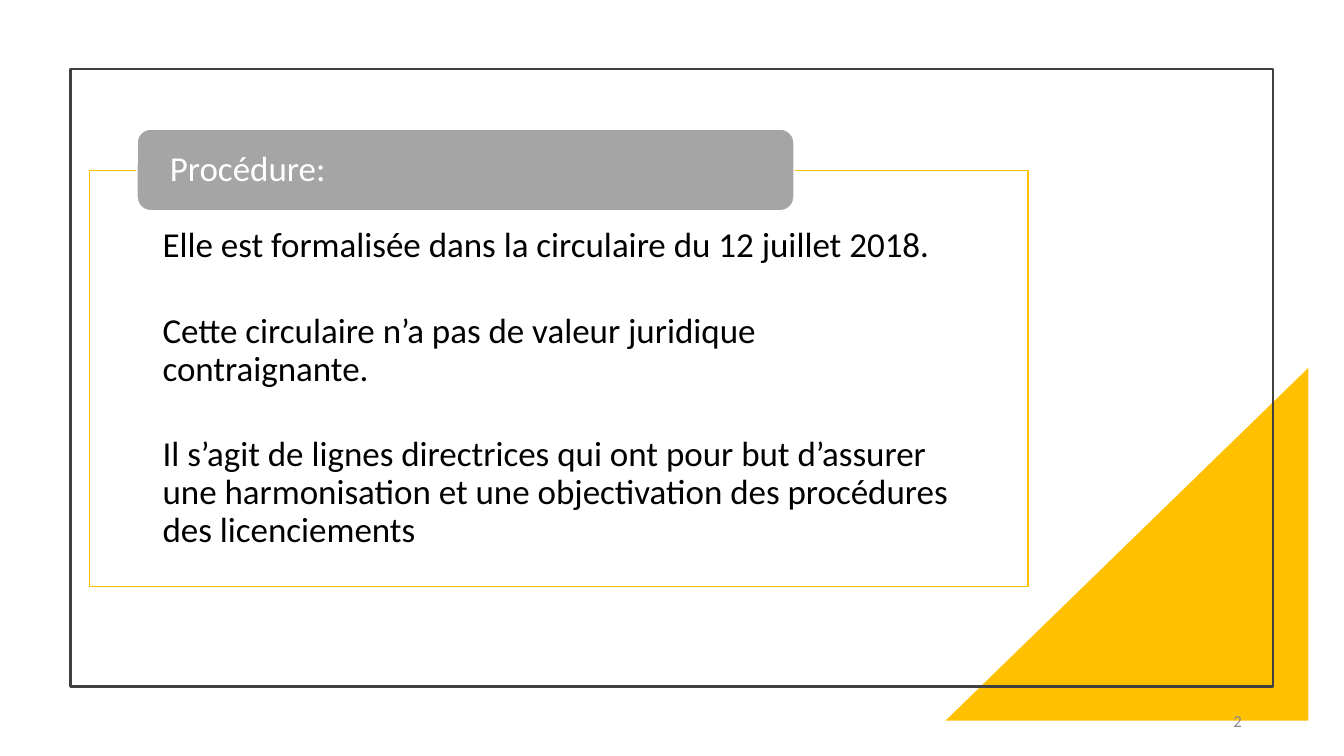
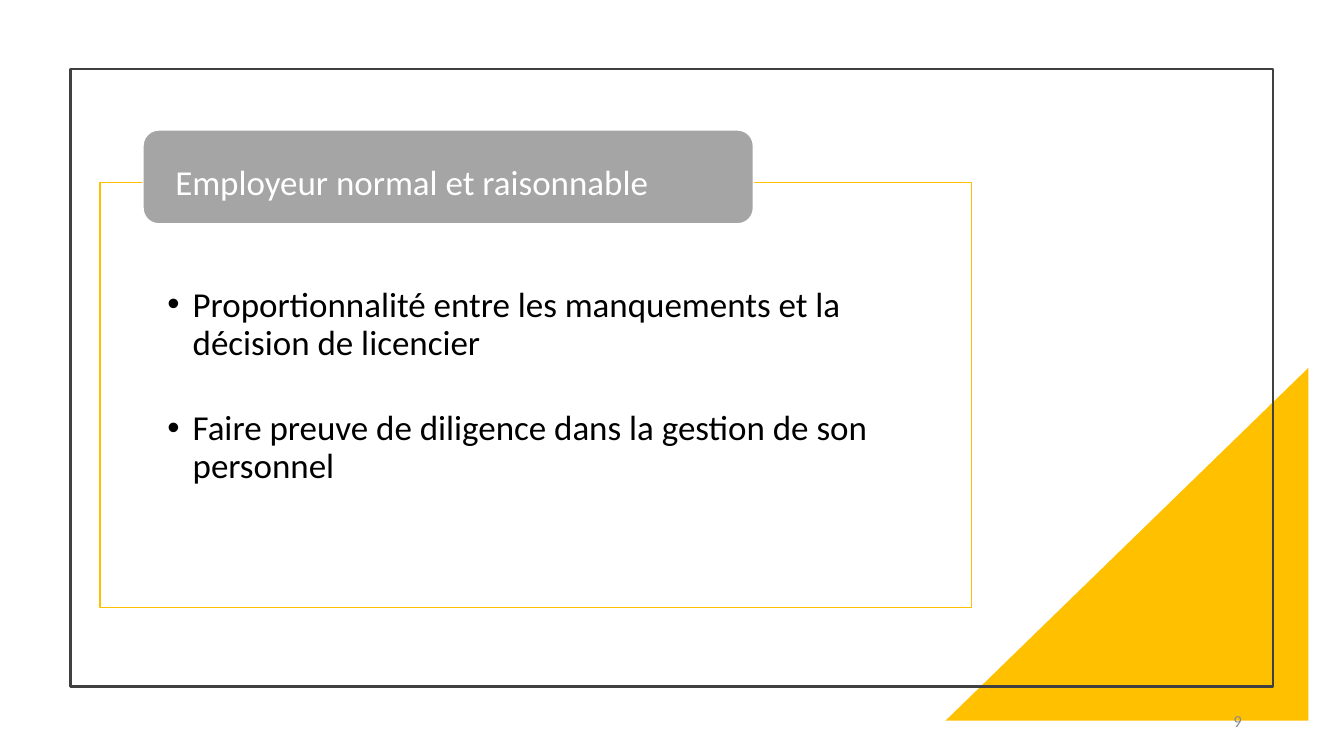
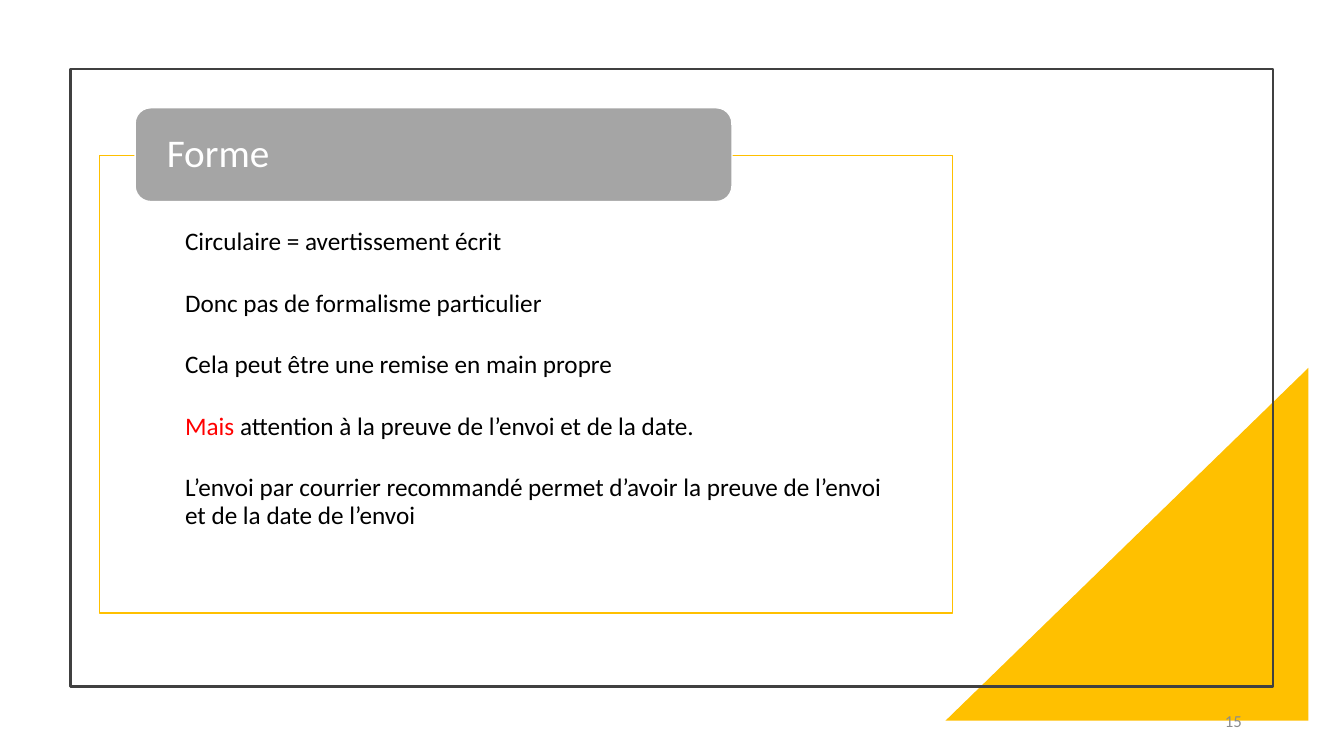
from dataclasses import dataclass

from lxml.etree import SubElement
from pptx import Presentation
from pptx.dml.color import RGBColor
from pptx.enum.shapes import MSO_SHAPE
from pptx.enum.text import MSO_ANCHOR, PP_ALIGN
from pptx.oxml.ns import qn
from pptx.shapes.autoshape import Shape
from pptx.slide import Slide
from pptx.text.text import _Paragraph as Paragraph
from pptx.util import Pt

COLORS = {
    "accent": "FFC000",
    "frame": "404040",
    "label": "A5A5A5",
    "white": "FFFFFF",
    "text": "000000",
    "warning": "FF0000",
    "number": "8C8C8C",
}
FONT = "Calibri"
LINE_SPACING = 0.9
BULLET_INDENT = 18


@dataclass(frozen=True)
class Box:
    left: float
    top: float
    width: float
    height: float


@dataclass(frozen=True)
class Card:
    """One slide: a bordered panel with a label across its top edge."""
    number: int
    title: str
    title_size: float
    label_left: float
    label_top: float
    label_height: float
    panel: Box
    body: list[str]
    body_size: float
    body_top: float
    gap: float
    indent: float = 0
    bulleted: bool = False
    title_drop: float = 0
    warning: str = ""


TRIANGLE = Box(675.4, 262.8, 259.2, 252)
FRAME = Box(50.4, 49, 859, 441.4)
NUMBER = Box(678.2, 500.4, 216, 28.8)

CARDS = [
    Card(
        2, "Procédure:", 25, 97.9, 92.2, 58.3, Box(64.1, 121.7, 670.3, 297.4),
        [
            "Elle est formalisée dans la circulaire du 12 juillet 2018.",
            "Cette circulaire n’a pas de valeur juridique contraignante.",
            "Il s’agit de lignes directrices qui ont pour but d’assurer une "
            "harmonisation et une objectivation des procédures des licenciements",
        ],
        body_size=25, body_top=41, gap=34,
    ),
    Card(
        9, "Employeur normal et raisonnable", 25, 102.2, 92.9, 67,
        Box(71.3, 130.3, 622.8, 303.8),
        [
            "Proportionnalité entre les manquements et la décision de licencier",
            "Faire preuve de diligence dans la gestion de son personnel",
        ],
        body_size=25, body_top=74.8, gap=34, indent=BULLET_INDENT,
        bulleted=True, title_drop=10,
    ),
    Card(
        15, "Forme", 28, 96.5, 77, 67, Box(71.3, 110.9, 609.1, 326.9),
        [
            "Circulaire = avertissement écrit",
            "Donc pas de formalisme particulier",
            "Cela peut être une remise en main propre",
            "Mais attention à la preuve de l’envoi et de la date.",
            "L’envoi par courrier recommandé permet d’avoir la preuve de "
            "l’envoi et de la date de l’envoi",
        ],
        body_size=18, body_top=52.8, gap=24.5, indent=13.7, warning="Mais",
    ),
]


def color(name: str) -> RGBColor:
    return RGBColor.from_string(COLORS[name])


def place(box: Box) -> tuple[Pt, Pt, Pt, Pt]:
    return Pt(box.left), Pt(box.top), Pt(box.width), Pt(box.height)


def add_block(slide: Slide, kind: MSO_SHAPE, box: Box, fill: str = "",
              line: str = "", line_width: float = 1) -> Shape:
    shape = slide.shapes.add_shape(kind, *place(box))
    shape.shadow.inherit = False
    if fill:
        shape.fill.solid()
        shape.fill.fore_color.rgb = color(fill)
    else:
        shape.fill.background()
    if line:
        shape.line.color.rgb = color(line)
        shape.line.width = Pt(line_width)
    else:
        shape.line.fill.background()
    return shape


def set_frame(shape: Shape, anchor: MSO_ANCHOR, side: float, top: float = 0) -> None:
    frame = shape.text_frame
    frame.word_wrap = True
    frame.vertical_anchor = anchor
    frame.margin_left = frame.margin_right = Pt(side)
    frame.margin_top, frame.margin_bottom = Pt(top), Pt(0)


def style(paragraph: Paragraph, size: float, color_name: str,
          alignment: PP_ALIGN = PP_ALIGN.LEFT) -> None:
    paragraph.alignment = alignment
    paragraph.font.name = FONT
    paragraph.font.size = Pt(size)
    paragraph.font.color.rgb = color(color_name)


def set_indent(paragraph: Paragraph, indent: float, bulleted: bool) -> None:
    properties = paragraph._p.get_or_add_pPr()
    properties.set("marL", str(Pt(indent)))
    properties.set("indent", str(Pt(-indent if bulleted else 0)))
    if bulleted:
        SubElement(properties, qn("a:buFont"), typeface="Arial")
        SubElement(properties, qn("a:buChar"), char="•")


def add_background(slide: Slide, number: int) -> None:
    # Corner triangle and frame
    triangle = add_block(slide, MSO_SHAPE.RIGHT_TRIANGLE, TRIANGLE, "accent")
    triangle._element.spPr.xfrm.set("flipH", "1")
    add_block(slide, MSO_SHAPE.RECTANGLE, FRAME, line="frame", line_width=1.5)

    # Slide number
    text_box = slide.shapes.add_textbox(*place(NUMBER))
    set_frame(text_box, MSO_ANCHOR.MIDDLE, 7.2)
    paragraph = text_box.text_frame.paragraphs[0]
    paragraph.text = str(number)
    style(paragraph, 12, "number", PP_ALIGN.RIGHT)


def add_panel(slide: Slide, card: Card) -> None:
    panel = add_block(slide, MSO_SHAPE.RECTANGLE, card.panel, "white", "accent")
    fill_color = panel._element.spPr.find(qn("a:solidFill"))[0]
    SubElement(fill_color, qn("a:alpha"), val="90000")
    set_frame(panel, MSO_ANCHOR.TOP, 0.0776 * card.panel.width, card.body_top)
    frame = panel.text_frame
    for index, text in enumerate(card.body):
        paragraph = frame.add_paragraph() if index else frame.paragraphs[0]
        paragraph.line_spacing = LINE_SPACING
        paragraph.space_before = Pt(card.gap if index else 0)
        set_indent(paragraph, card.indent, card.bulleted)
        style(paragraph, card.body_size, "text")
        if card.warning and text.startswith(card.warning):
            run = paragraph.add_run()
            run.text = card.warning
            run.font.color.rgb = color("warning")
            text = text.removeprefix(card.warning)
        paragraph.add_run().text = text


def add_label(slide: Slide, card: Card) -> None:
    box = Box(card.label_left, card.label_top, 0.7 * card.panel.width, card.label_height)
    label = add_block(slide, MSO_SHAPE.ROUNDED_RECTANGLE, box, "label", "white")
    side = 0.0265 * card.panel.width + 0.0488 * card.label_height
    set_frame(label, MSO_ANCHOR.MIDDLE, side, card.title_drop)
    paragraph = label.text_frame.paragraphs[0]
    paragraph.text = card.title
    paragraph.line_spacing = LINE_SPACING
    style(paragraph, card.title_size, "white")


def main() -> None:
    presentation = Presentation()
    presentation.slide_width, presentation.slide_height = Pt(960), Pt(540)
    blank_layout = presentation.slide_layouts[6]
    for card in CARDS:
        slide = presentation.slides.add_slide(blank_layout)
        add_background(slide, card.number)
        add_panel(slide, card)
        add_label(slide, card)
    presentation.save("out.pptx")


if __name__ == "__main__":
    main()
